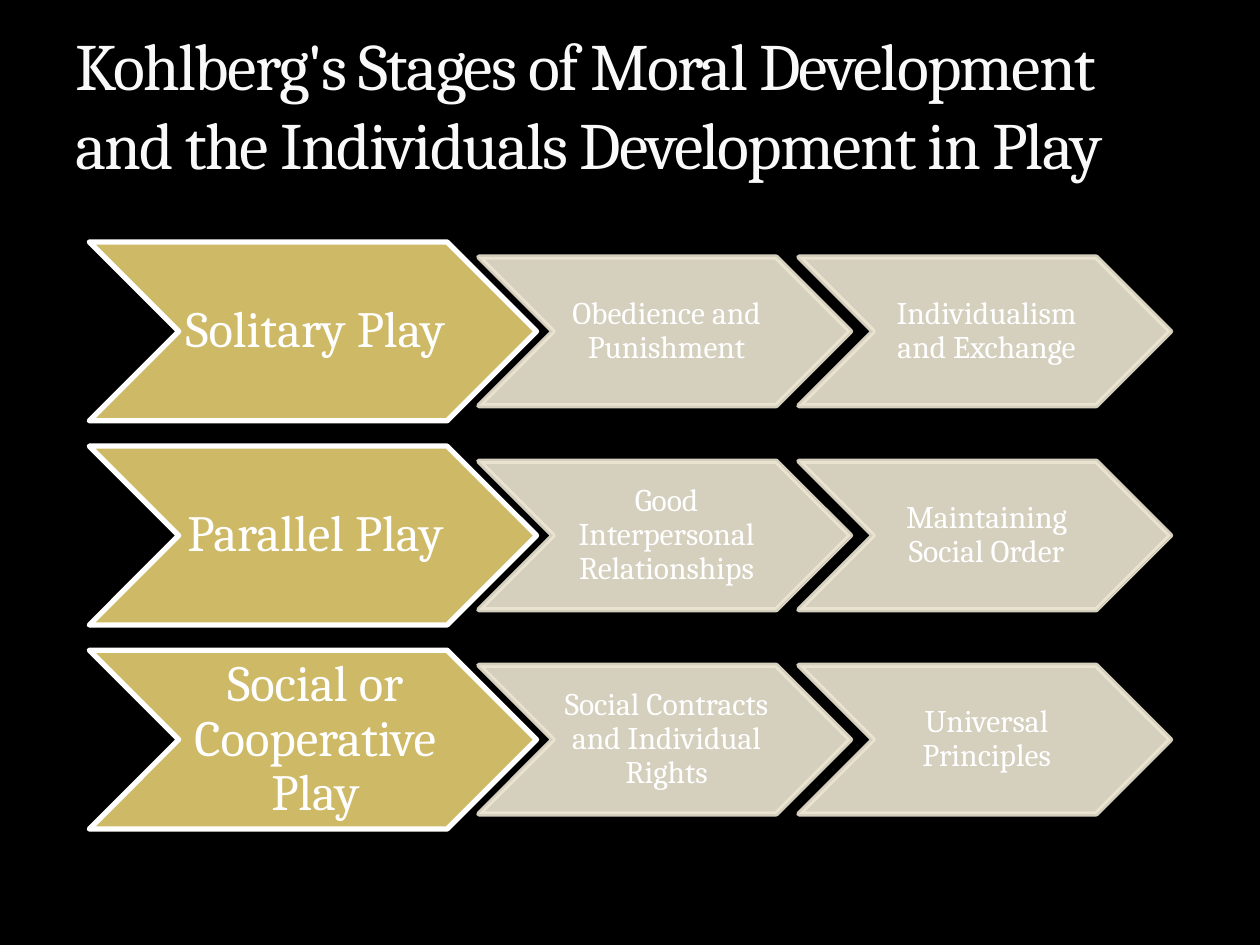
from dataclasses import dataclass

from lxml import etree
from pptx import Presentation
from pptx import util as u
from pptx.dml.color import RGBColor
from pptx.enum import shapes, text
from pptx.oxml import ns


@dataclass(frozen=True)
class Theme:
    font: str = "Cambria"
    background: str = "000000"
    title: str = "F9F9F9"
    title_edge: str = "5D5B60"
    label: str = "FFFFFF"
    play: str = "CEB966"
    play_edge: str = "FFFFFF"
    stage: str = "EDE6D3"
    title_size: float = 37.8
    play_size: float = 29
    stage_size: float = 18


ROWS = [
    ("Solitary Play", "Obedience and Punishment", "Individualism and Exchange"),
    ("Parallel Play", "Good Interpersonal Relationships", "Maintaining Social Order"),
    ("Social or Cooperative Play", "Social Contracts and Individual Rights", "Universal Principles"),
]
FIRST_MIDDLE, ROW_STEP = 189.36, 116.64
PLAY_LEFT, PLAY_HEIGHT = 51, 102.24
STAGE_LEFT, STAGE_STEP, STAGE_HEIGHT = 273.6, 182.88, 84.96
LENGTH_RATIO = 2.5


def set_alpha(fill, percent):
    color = fill._xPr.find(".//" + ns.qn("a:srgbClr"))
    etree.SubElement(color, ns.qn("a:alpha"), val=str(percent * 1000))


def write(frame, words, *, font, size, color, align, anchor, margins, spacing=1.0):
    frame.word_wrap = True
    frame.vertical_anchor = anchor
    frame.margin_left, frame.margin_top, frame.margin_right, frame.margin_bottom = map(u.Pt, margins)
    para = frame.paragraphs[0]
    para.alignment = align
    para.line_spacing = spacing
    span = para.add_run()
    span.text = words
    span.font.name = font
    span.font.size = u.Pt(size)
    span.font.color.rgb = RGBColor.from_string(color)
    return span


class SlideBuilder:
    """Draws styled elements on the current slide."""

    def __init__(self, page, theme):
        self.page = page
        self.theme = theme

    def background(self):
        fill = self.page.background.fill
        fill.solid()
        fill.fore_color.rgb = RGBColor.from_string(self.theme.background)

    def title(self, words, left, top, width, height):
        box = self.page.shapes.add_textbox(u.Pt(left), u.Pt(top), u.Pt(width), u.Pt(height))
        span = write(box.text_frame, words, font=self.theme.font, size=self.theme.title_size,
                     color=self.theme.title, align=text.PP_ALIGN.LEFT,
                     anchor=text.MSO_ANCHOR.BOTTOM, margins=(7.2, 3.6, 7.2, 3.6))
        style = span.font._element
        style.set("spc", "-100")
        edge = etree.Element(ns.qn("a:ln"), w=str(u.Pt(0.25)))
        paint = etree.SubElement(edge, ns.qn("a:solidFill"))
        color = etree.SubElement(paint, ns.qn("a:srgbClr"), val=self.theme.title_edge)
        etree.SubElement(color, ns.qn("a:alpha"), val="25000")
        style.insert(0, edge)

    def chevron(self, words, left, middle, height, *, fill, edge, size, margins, opacity=100):
        shape = self.page.shapes.add_shape(
            shapes.MSO_SHAPE.CHEVRON, u.Pt(left), u.Pt(middle - height / 2),
            u.Pt(height * LENGTH_RATIO), u.Pt(height))
        shape.shadow.inherit = False
        shape.line.width = u.Pt(3)
        for paint, color in ((shape.fill, fill), (shape.line.fill, edge)):
            paint.solid()
            paint.fore_color.rgb = RGBColor.from_string(color)
            if opacity < 100:
                set_alpha(paint, opacity)
        etree.SubElement(shape.line._ln, ns.qn("a:round"))
        write(shape.text_frame, words, font=self.theme.font, size=size, color=self.theme.label,
              align=text.PP_ALIGN.CENTER, anchor=text.MSO_ANCHOR.MIDDLE,
              margins=margins, spacing=0.9)

    def play(self, words, middle):
        self.chevron(words, PLAY_LEFT, middle, PLAY_HEIGHT, fill=self.theme.play,
                     edge=self.theme.play_edge, size=self.theme.play_size,
                     margins=(2.9, 1.4, 0, 1.4))

    def stage(self, words, column, middle):
        self.chevron(words, STAGE_LEFT + column * STAGE_STEP, middle, STAGE_HEIGHT,
                     fill=self.theme.stage, edge=self.theme.stage, size=self.theme.stage_size,
                     margins=(2.2, 0.7, 0, 0.7), opacity=90)


def main():
    deck = Presentation()
    deck.slide_width, deck.slide_height = u.Pt(720), u.Pt(540)
    builder = SlideBuilder(deck.slides.add_slide(deck.slide_layouts[6]), Theme())
    builder.background()
    builder.title("Kohlberg's Stages of Moral Development and the Individuals Development in Play",
                  36, 12.24, 648, 95.76)
    for row, (play, *stages) in enumerate(ROWS):
        middle = FIRST_MIDDLE + row * ROW_STEP
        builder.play(play, middle)
        for column, stage in enumerate(stages):
            builder.stage(stage, column, middle)
    deck.save("out.pptx")


if __name__ == "__main__":
    main()
